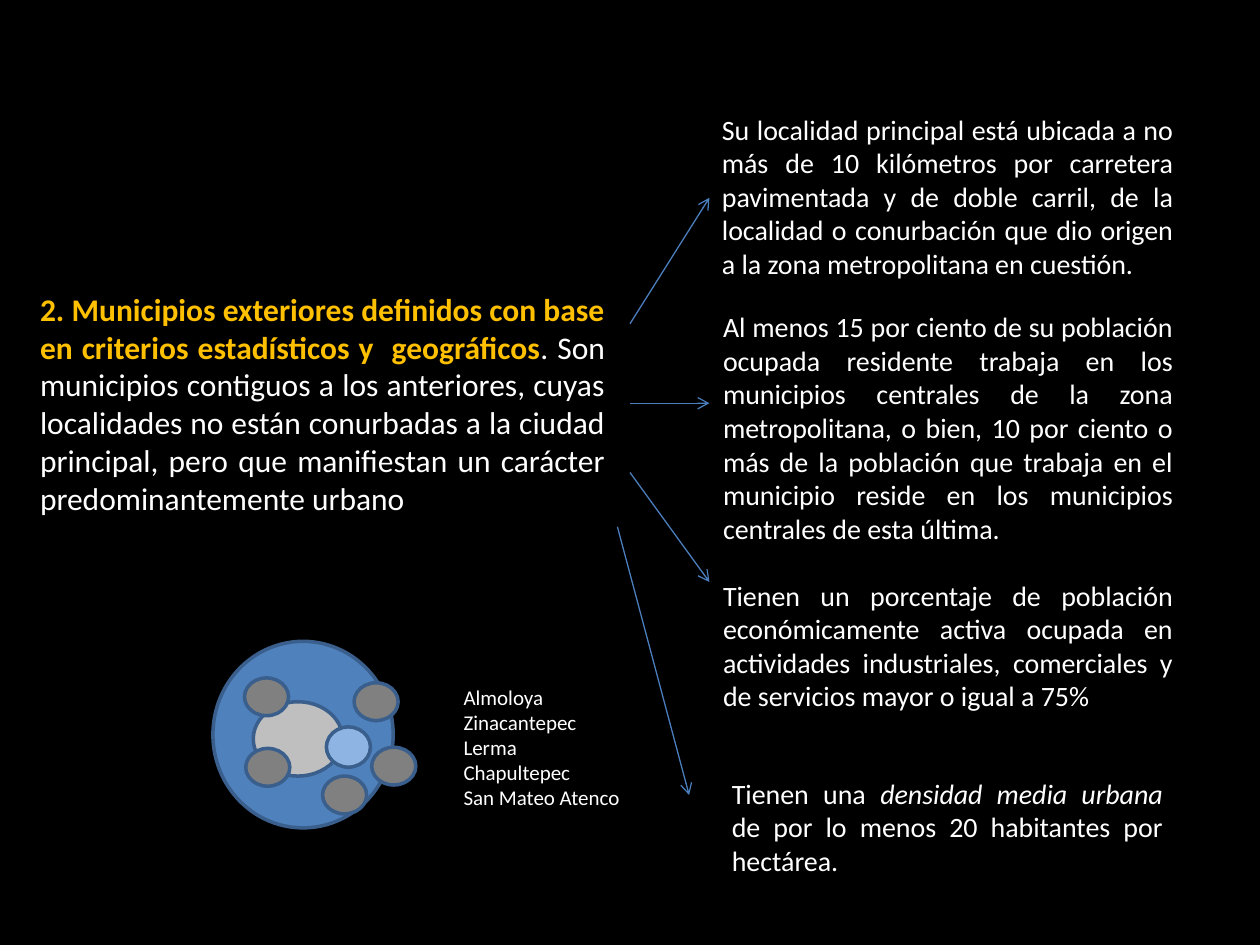
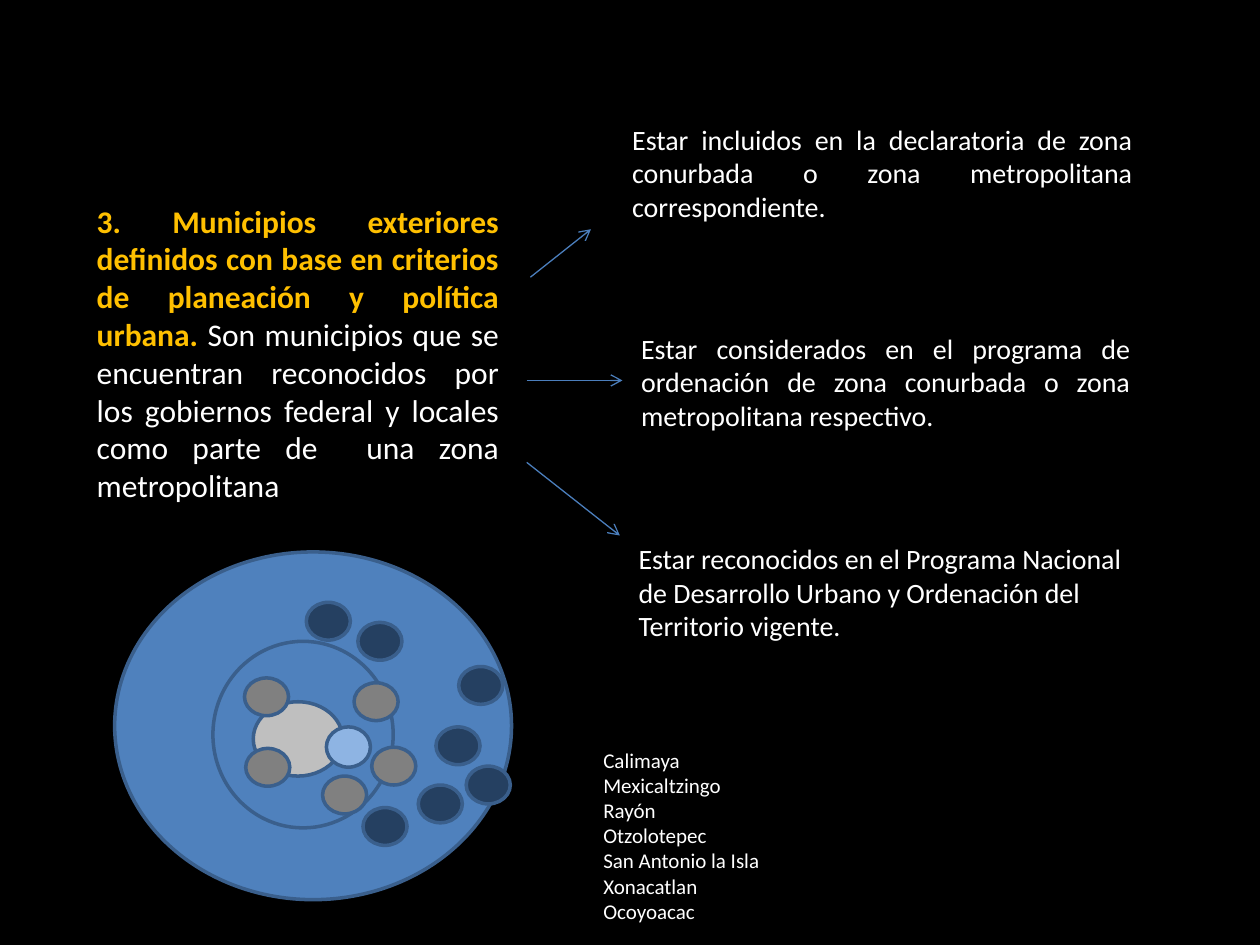
from lxml.etree import SubElement
from pptx import Presentation
from pptx.dml.color import RGBColor
from pptx.enum.shapes import MSO_CONNECTOR, MSO_SHAPE
from pptx.enum.text import MSO_AUTO_SIZE, PP_ALIGN
from pptx.oxml.ns import qn
from pptx.util import Pt

COLORS = {
    "background": "000000",
    "text": "FFFFFF",
    "heading": "FFC000",
    "zone": "4F81BD",
    "center": "BFBFBF",
    "conurbation": "8EB4E3",
    "statistical": "808080",
    "planning": "254061",
    "outline": "3A5F8C",
    "arrow": "4B7EBC",
}
RGB = {name: RGBColor.from_string(value) for name, value in COLORS.items()}
FONT = "Calibri"
TOWN_SIZE = (25.2, 21.6)

# Ovals shared by both maps: fill, left, top, width, height
METRO_MAP = [
    ("zone", 121.7, 366.5, 103, 106.6),
    ("center", 144.7, 401, 51.1, 42.5),
    ("conurbation", 186.5, 415.4, 25.2, 23),
]
STATISTICAL_TOWNS = [(140.4, 427.7), (184.3, 443.5), (202.3, 390.2),
                     (212.4, 427), (139.7, 387.4)]
PLANNING_TOWNS = [(207.4, 461.5), (204.5, 355.7), (249.1, 415.4), (262.1, 380.9),
                  (175, 344.2), (239, 448.6), (266.4, 437.8)]
METRO_MAP += [("statistical", x, y, *TOWN_SIZE) for x, y in STATISTICAL_TOWNS]

SLIDES = [
    {
        "definition": (
            (15.8, 162, 337, 138.2),
            "2. Municipios exteriores definidos con base en criterios estadísticos y  geográficos",
            ". Son municipios contiguos a los anteriores, cuyas localidades no están "
            "conurbadas a la ciudad principal, pero que manifiestan un carácter "
            "predominantemente urbano",
        ),
        "criteria": [
            ((405.4, 60.5, 272.2, 104.4), PP_ALIGN.JUSTIFY, [
                ("Su localidad principal está ubicada a no más de 10 kilómetros por "
                 "carretera pavimentada y de doble carril, de la localidad o conurbación "
                 "que dio origen a la zona metropolitana en cuestión.", {})]),
            ((406.1, 173.5, 271.4, 143.3), PP_ALIGN.JUSTIFY, [
                ("Al menos 15 por ciento de su población ocupada residente trabaja en los "
                 "municipios centrales de la zona metropolitana, o bien, 10 por ciento o "
                 "más de la población que trabaja en el municipio reside en los municipios "
                 "centrales de esta última.", {})]),
            ((406.1, 326.9, 271.4, 85), PP_ALIGN.JUSTIFY, [
                ("Tienen un porcentaje de población económicamente activa ocupada en "
                 "actividades industriales, comerciales y de servicios mayor o igual a 75%",
                 {})]),
            ((411.1, 439.9, 260.6, 65.5), PP_ALIGN.JUSTIFY, [
                ("Tienen una ", {}),
                ("densidad media urbana ", {"italic": True}),
                ("de por lo menos 20 habitantes por hectárea.", {})]),
        ],
        "towns": ((257.8, 387.4, 113, 79.9),
                  ["Almoloya", "Zinacantepec", "Lerma", "Chapultepec", "San Mateo Atenco"]),
        "map": METRO_MAP,
        "arrows": [(360, 185, 405.4, 113), (360, 230.4, 405.4, 230.4),
                   (360, 270, 405.4, 332.6), (352.8, 301, 393.8, 454.3)],
    },
    {
        "definition": (
            (48.2, 111.6, 244.1, 181.4),
            "3. Municipios exteriores definidos con base en criterios de planeación y "
            "política urbana. ",
            "Son municipios que se encuentran reconocidos por los gobiernos federal y "
            "locales como parte de  una zona metropolitana",
        ),
        "criteria": [
            ((354.2, 66.2, 300.2, 65.5), PP_ALIGN.JUSTIFY, [
                ("Estar incluidos en la declaratoria de zona conurbada o zona "
                 "metropolitana correspondiente.", {})]),
            ((359.3, 185.8, 293.8, 65.5), PP_ALIGN.JUSTIFY, [
                ("Estar considerados en el programa de ordenación de zona conurbada o "
                 "zona metropolitana respectivo.", {})]),
            ((357.8, 306, 293.8, 65.5), PP_ALIGN.LEFT, [
                ("Estar reconocidos en el Programa Nacional de Desarrollo Urbano y "
                 "Ordenación del Territorio vigente.", {})]),
        ],
        "towns": ((337.7, 423.4, 113, 108.7),
                  ["Calimaya", "Mexicaltzingo", "Rayón", "Otzolotepec",
                   "San Antonio la Isla Xonacatlan", "Ocoyoacac"]),
        "map": [("zone", 65.5, 315.4, 226.8, 198.7), *METRO_MAP,
                *[("planning", x, y, *TOWN_SIZE) for x, y in PLANNING_TOWNS]],
        "arrows": [(303.1, 158.4, 337.7, 131), (301, 217.4, 355.7, 217.4),
                   (301, 264.2, 354.2, 306)],
    },
]


def add_text(slide, box, paragraphs, size=16, align=PP_ALIGN.LEFT):
    """Each paragraph is a list of (text, format) runs."""
    tf = slide.shapes.add_textbox(*map(Pt, box)).text_frame
    tf.word_wrap = True
    tf.auto_size = MSO_AUTO_SIZE.SHAPE_TO_FIT_TEXT
    for i, runs in enumerate(paragraphs):
        p = tf.add_paragraph() if i else tf.paragraphs[0]
        p.alignment = align
        for text, fmt in runs:
            r = p.add_run()
            r.text = text
            r.font.name = FONT
            r.font.size = Pt(size)
            r.font.bold = fmt.get("bold", False)
            r.font.italic = fmt.get("italic", False)
            r.font.color.rgb = RGB[fmt.get("color", "text")]


prs = Presentation()
prs.slide_width, prs.slide_height = Pt(720), Pt(540)
background = prs.slide_master.background.fill
background.solid()
background.fore_color.rgb = RGB["background"]

for content in SLIDES:
    slide = prs.slides.add_slide(prs.slide_layouts[6])

    for color, *box in content["map"]:
        sp = slide.shapes.add_shape(MSO_SHAPE.OVAL, *map(Pt, box))
        sp.shadow.inherit = False
        sp.fill.solid()
        sp.fill.fore_color.rgb = RGB[color]
        sp.line.color.rgb = RGB["outline"]
        sp.line.width = Pt(2)

    box, heading, explanation = content["definition"]
    add_text(slide, box, [[(heading, {"bold": True, "color": "heading"}), (explanation, {})]],
             size=18, align=PP_ALIGN.JUSTIFY)
    for box, align, runs in content["criteria"]:
        add_text(slide, box, [runs], align=align)
    box, towns = content["towns"]
    add_text(slide, box, [[(town, {})] for town in towns], size=12)

    for ends in content["arrows"]:
        arrow = slide.shapes.add_connector(MSO_CONNECTOR.STRAIGHT, *map(Pt, ends))
        arrow.line.color.rgb = RGB["arrow"]
        arrow.line.width = Pt(0.75)
        SubElement(arrow.line._get_or_add_ln(), qn("a:tailEnd"), type="arrow")
        SubElement(arrow._element.spPr, qn("a:effectLst"))

prs.save("out.pptx")
